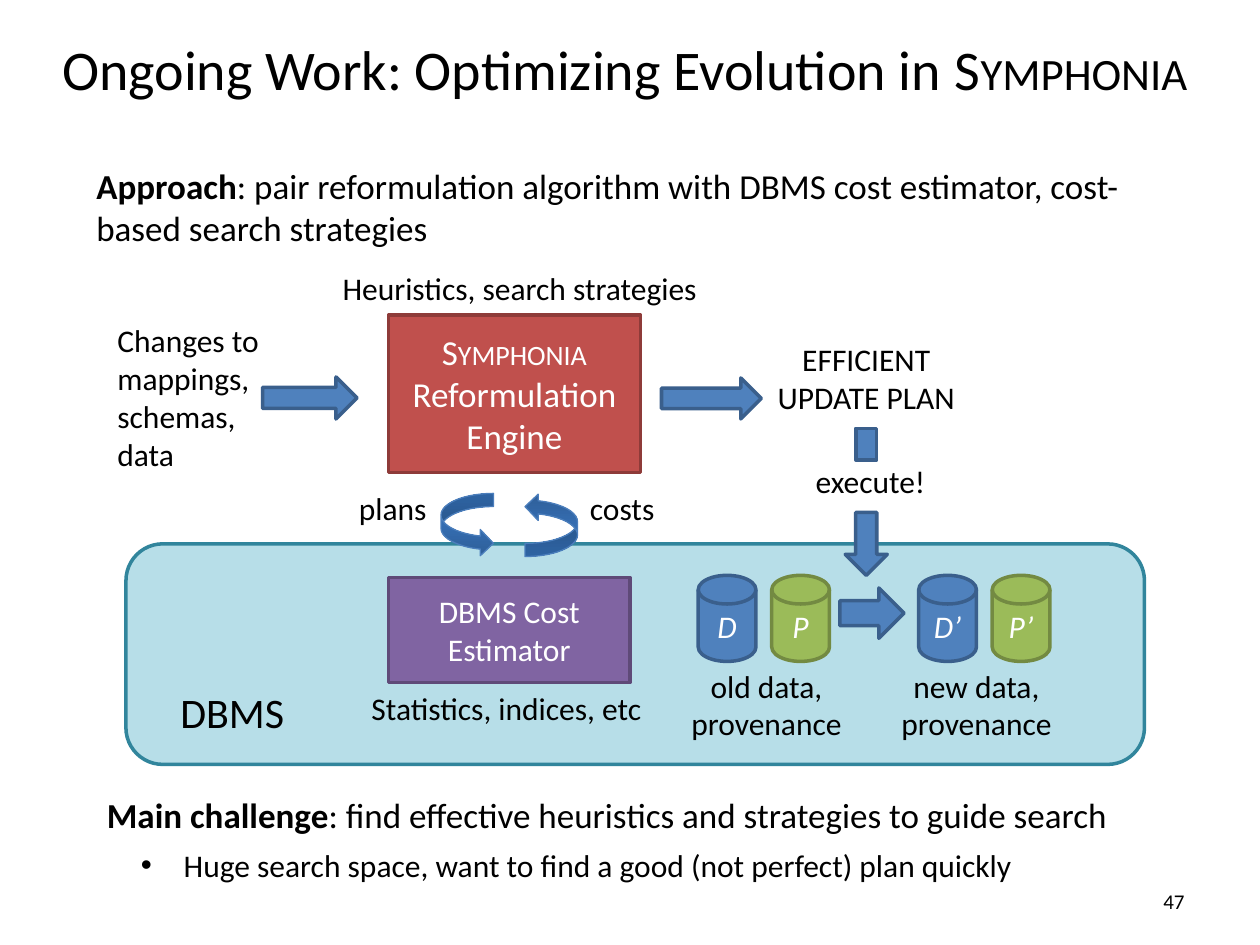
from lxml.etree import SubElement
from pptx import Presentation
from pptx.dml.color import RGBColor
from pptx.enum.shapes import MSO_SHAPE
from pptx.enum.text import MSO_ANCHOR, PP_ALIGN
from pptx.oxml.ns import qn
from pptx.util import Inches, Pt

COLS, ROWS = 120, 90
WIDTH, HEIGHT = Inches(10), Inches(7.5)
FONT = "Calibri"
BLACK, WHITE = "000000", "FFFFFF"
BLUE, GREEN = ("4F81BD", "3A5F8C"), ("9BBB59", "738A42")
RED, PURPLE, TEAL = ("C0504D", "8E3B39"), ("8064A2", "5F4A78"), ("B7DEE8", "31859C")
LEFT, CENTER, RIGHT = PP_ALIGN.LEFT, PP_ALIGN.CENTER, PP_ALIGN.RIGHT
TOP, MIDDLE = MSO_ANCHOR.TOP, MSO_ANCHOR.MIDDLE

SYSTEM = ("Symphonia", "small")
BOXES = [
    (MSO_SHAPE.ROUNDED_RECTANGLE, (12, 51.8, 97, 21), TEAL, [], 18),
    (MSO_SHAPE.RECTANGLE, (37, 30, 24, 15), RED,
     [[SYSTEM], ["Reformulation"], ["Engine"]], 20),
    (MSO_SHAPE.RECTANGLE, (37, 55, 23, 10), PURPLE, [["DBMS Cost Estimator"]], 18),
    (MSO_SHAPE.RIGHT_ARROW, (25, 35.9, 9, 4), BLUE, [], 18),
    (MSO_SHAPE.RIGHT_ARROW, (63, 36, 9.5, 3.9), BLUE, [], 18),
    (MSO_SHAPE.RIGHT_ARROW, (80, 56, 6.1, 4.8), BLUE, [], 18),
    (MSO_SHAPE.RECTANGLE, (81.5, 40.8, 2, 3), BLUE, [], 18),
    (MSO_SHAPE.DOWN_ARROW, (80.5, 48.8, 4, 6), BLUE, [], 18),
]
STORES = [("D", 0, 0, BLUE), ("P", 0, 1, GREEN), ("D’", 1, 0, BLUE), ("P’", 1, 1, GREEN)]
STORE_LEFT, STORE_TOP, STORE_W, STORE_H = 66.5, 54.8, 5.5, 8.2
PAIR_STEP, STORE_STEP = 21, 7
CYCLE = [(42, 0), (50, 180)]
LABELS = [
    ((2, -1, 115, 15), [["Ongoing Work: Optimizing Evolution in ", SYSTEM]], 32, CENTER, MIDDLE),
    ((8, 15.1, 101, 9.2),
     [[("Approach", "bold"),
       ": pair reformulation algorithm with DBMS cost estimator, cost-based search strategies"]],
     20, LEFT, TOP),
    ((28, 25, 43, 4.8), [["Heuristics, search strategies"]], 18, CENTER, TOP),
    ((10, 30, 18, 15.7), [["Changes to mappings,"], ["schemas,"], ["data"]], 18, LEFT, TOP),
    ((72.5, 31.8, 20, 8.5), [["EFFICIENT UPDATE PLAN"]], 18, CENTER, TOP),
    ((76.5, 43.4, 15, 4.8), [["execute!"]], 18, LEFT, TOP),
    ((33, 46, 12, 4.8), [["plans"]], 18, LEFT, TOP),
    ((55, 46, 12, 4.8), [["costs"]], 18, LEFT, TOP),
    ((16, 64.8, 24, 6), [["DBMS"]], 24, LEFT, TOP),
    ((34.2, 65, 29, 4.8), [["Statistics, indices, etc"]], 18, LEFT, TOP),
    ((61.5, 62.9, 23, 8.5), [["old data, provenance"]], 18, CENTER, TOP),
    ((81.5, 62.9, 23, 8.5), [["new data, provenance"]], 18, CENTER, TOP),
    ((94, 83.4, 28 - 8, 4.8), [["47"]], 12, RIGHT, MIDDLE),
]
CHALLENGE = [
    [("Main challenge", "bold"), ": find effective heuristics and strategies to guide search"],
    ["Huge search space, want to find a good (not perfect) plan quickly"],
]


def color(value):
    return RGBColor.from_string(value)


def place(x, y, w, h):
    return [int(v) for v in (x * WIDTH / COLS, y * HEIGHT / ROWS,
                             w * WIDTH / COLS, h * HEIGHT / ROWS)]


def write(sp, paragraphs, size, ink=BLACK, align=LEFT, anchor=TOP, italic=False):
    tf = sp.text_frame
    tf.word_wrap = True
    tf.vertical_anchor = anchor
    for i, parts in enumerate(paragraphs):
        p = tf.add_paragraph() if i else tf.paragraphs[0]
        p.alignment = align
        for part in parts:
            text, style = (part, None) if isinstance(part, str) else part
            r = p.add_run()
            r.text = text
            r.font.name, r.font.size = FONT, Pt(size)
            r.font.color.rgb = color(ink)
            r.font.bold, r.font.italic = style == "bold", italic
            if style == "small":
                r.font._element.set("cap", "small")
    return tf


def add_label(s, at, paragraphs, size, align=LEFT, anchor=TOP):
    return write(s.shapes.add_textbox(*place(*at)), paragraphs, size, BLACK, align, anchor)


def add_box(s, kind, at, colors, width=2):
    sp = s.shapes.add_shape(kind, *place(*at))
    sp.shadow.inherit = False
    sp.fill.solid()
    sp.fill.fore_color.rgb = color(colors[0])
    sp.line.color.rgb = color(colors[1])
    sp.line.width = Pt(width)
    return sp


def add_store(s, name, pair, slot, colors):
    x = STORE_LEFT + pair * PAIR_STEP + slot * STORE_STEP
    sp = add_box(s, MSO_SHAPE.FLOWCHART_MAGNETIC_DISK,
                 (x, STORE_TOP, STORE_W, STORE_H), colors)
    tf = write(sp, [[name]], 18, WHITE, CENTER, MIDDLE, italic=True)
    tf.margin_left = tf.margin_right = 0


def add_cycle_arrow(s, x, rotation):
    sp = add_box(s, MSO_SHAPE.CURVED_RIGHT_ARROW, (x, 47, 5, 6), ("2F5F99", "4B7EBC"), 0.75)
    sp.rotation = rotation
    sp.fill.gradient()
    sp.fill.gradient_angle = 90
    for stop, value in zip(sp.fill.gradient_stops, ("2F5F99", "3A7CCB")):
        stop.color.rgb = color(value)


def add_challenge(s):
    tf = add_label(s, (9, 75, 108, 9.8), CHALLENGE, 20)
    for p in tf.paragraphs:
        p.space_after = Pt(6)
    bullet = tf.paragraphs[1]
    bullet.level = 1
    for r in bullet.runs:
        r.font.size = Pt(18)
    pPr = bullet._p.get_or_add_pPr()
    pPr.set("marL", str(Inches(0.61)))
    pPr.set("indent", str(Inches(-0.34)))
    SubElement(pPr, qn("a:buFont"), typeface="Arial")
    SubElement(pPr, qn("a:buChar"), char="•")


def main():
    prs = Presentation()
    prs.slide_width, prs.slide_height = WIDTH, HEIGHT
    s = prs.slides.add_slide(prs.slide_layouts[6])
    for kind, at, colors, paragraphs, size in BOXES:
        sp = add_box(s, kind, at, colors)
        if paragraphs:
            write(sp, paragraphs, size, WHITE, CENTER, MIDDLE)
    for store in STORES:
        add_store(s, *store)
    for x, rotation in CYCLE:
        add_cycle_arrow(s, x, rotation)
    for label in LABELS:
        add_label(s, *label)
    add_challenge(s)
    prs.save("out.pptx")


if __name__ == "__main__":
    main()
